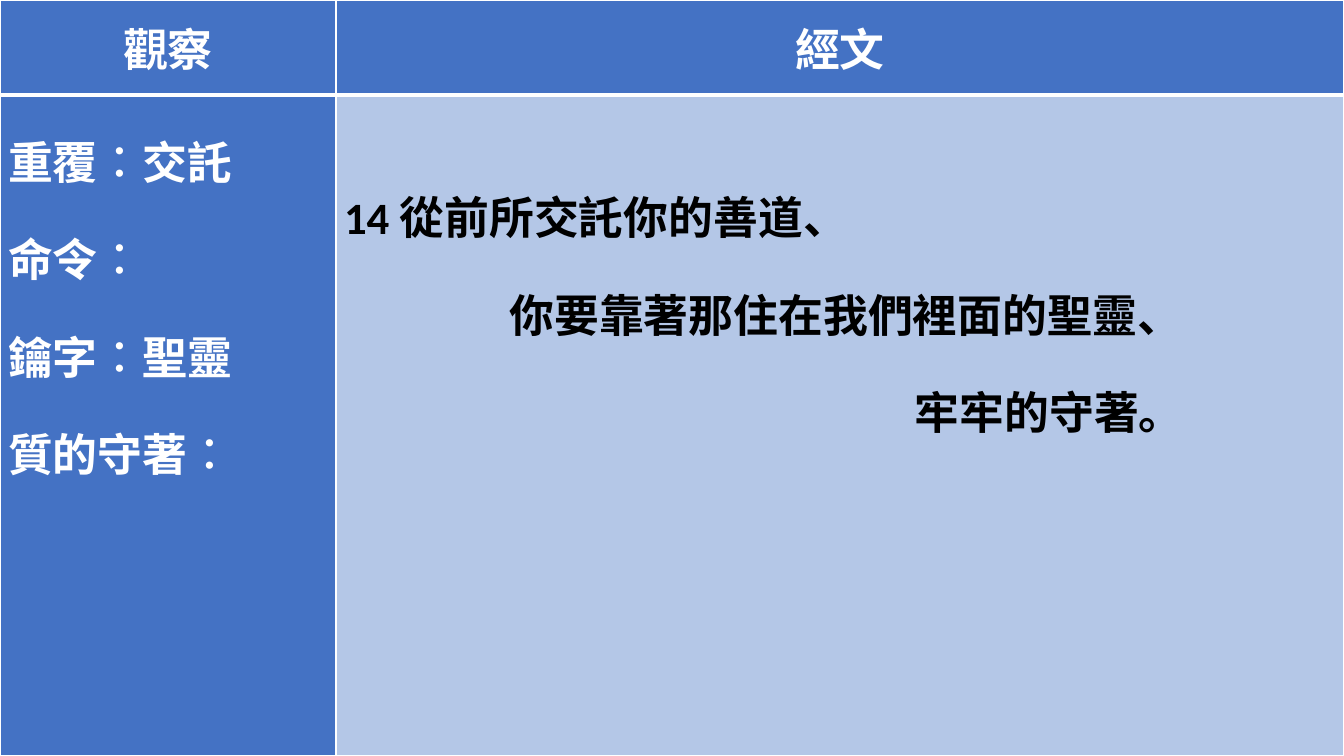
from lxml.etree import SubElement
from pptx import Presentation
from pptx.dml.color import RGBColor
from pptx.enum.text import MSO_ANCHOR as Anchor, PP_ALIGN as Align
from pptx.oxml.ns import qn
from pptx.util import Inches, Pt

BLUE = RGBColor(0x44, 0x72, 0xC4)
PALE_BLUE = RGBColor(0xB4, 0xC7, 0xE7)
WHITE = RGBColor(0xFF, 0xFF, 0xFF)
BLACK = RGBColor(0x00, 0x00, 0x00)

FONT_FORMAT = {"name": "Calibri", "size": Pt(32), "bold": True}
HEADER_BORDERS = {"L": 1, "R": 1, "T": 1, "B": 3}
BODY_BORDERS = {"L": 1, "R": 1, "T": 3, "B": 1}
HEADER_HEIGHT = 0.94
OBSERVATION_SHARE = 0.25

OBSERVATIONS = [("重覆︰交託", 0), ("命令︰", 0), ("鑰字︰聖靈", 0), ("質的守著︰", 0)]
VERSE = [
    ("14 從前所交託你的善道、", 0),
    ("你要靠著那住在我們裡面的聖靈、", 1.64),
    ("牢牢的守著。", 5.66),
]


def apply_format(target, values):
    for name, value in values.items():
        setattr(target, name, value)


def set_borders(cell, widths):
    properties = cell._tc.get_or_add_tcPr()
    for side, width in widths.items():
        line = SubElement(properties, qn(f"a:ln{side}"), w=str(Pt(width)))
        fill = SubElement(line, qn("a:solidFill"))
        SubElement(fill, qn("a:srgbClr"), val=str(WHITE))


def fill_cell(cell, lines, background, color, borders, cell_format, paragraph_format):
    set_borders(cell, borders)
    cell.fill.solid()
    cell.fill.fore_color.rgb = background
    margins = {
        "margin_left": Inches(0.08),
        "margin_right": Inches(0.08),
        "margin_top": 0,
        "margin_bottom": 0,
    }
    apply_format(cell, {**margins, **cell_format})
    frame = cell.text_frame
    for index, (text, indent) in enumerate(lines):
        paragraph = frame.add_paragraph() if index else frame.paragraphs[0]
        apply_format(paragraph, paragraph_format)
        if indent:
            paragraph._p.get_or_add_pPr().set("marL", str(Inches(indent)))
        run = paragraph.add_run()
        run.text = text
        apply_format(run.font, FONT_FORMAT)
        run.font.color.rgb = color


def add_study_table(slide, left, top, width, height):
    table = slide.shapes.add_table(
        2, 2, Inches(left), Inches(top), Inches(width), Inches(height)
    ).table
    for column, share in zip(table.columns, (OBSERVATION_SHARE, 1 - OBSERVATION_SHARE)):
        column.width = Inches(width * share)
    for row, row_height in zip(table.rows, (HEADER_HEIGHT, height - HEADER_HEIGHT)):
        row.height = Inches(row_height)

    for column, title in enumerate(("觀察", "經文")):
        fill_cell(table.cell(0, column), [(title, 0)], BLUE, WHITE, HEADER_BORDERS,
                  {"vertical_anchor": Anchor.MIDDLE}, {"alignment": Align.CENTER})

    body_paragraph = {"alignment": Align.LEFT, "line_spacing": 1.5}
    fill_cell(table.cell(1, 0), OBSERVATIONS, BLUE, WHITE, BODY_BORDERS,
              {"vertical_anchor": Anchor.TOP}, body_paragraph)
    fill_cell(table.cell(1, 1), VERSE, PALE_BLUE, BLACK, BODY_BORDERS,
              {"vertical_anchor": Anchor.TOP, "margin_top": Inches(0.55)}, body_paragraph)


def main():
    presentation = Presentation()
    presentation.slide_width = Inches(13.33)
    presentation.slide_height = Inches(7.5)
    slide = presentation.slides.add_slide(presentation.slide_layouts[6])
    add_study_table(slide, 0, 0, 13.33, 7.5)
    presentation.save("out.pptx")


if __name__ == "__main__":
    main()
